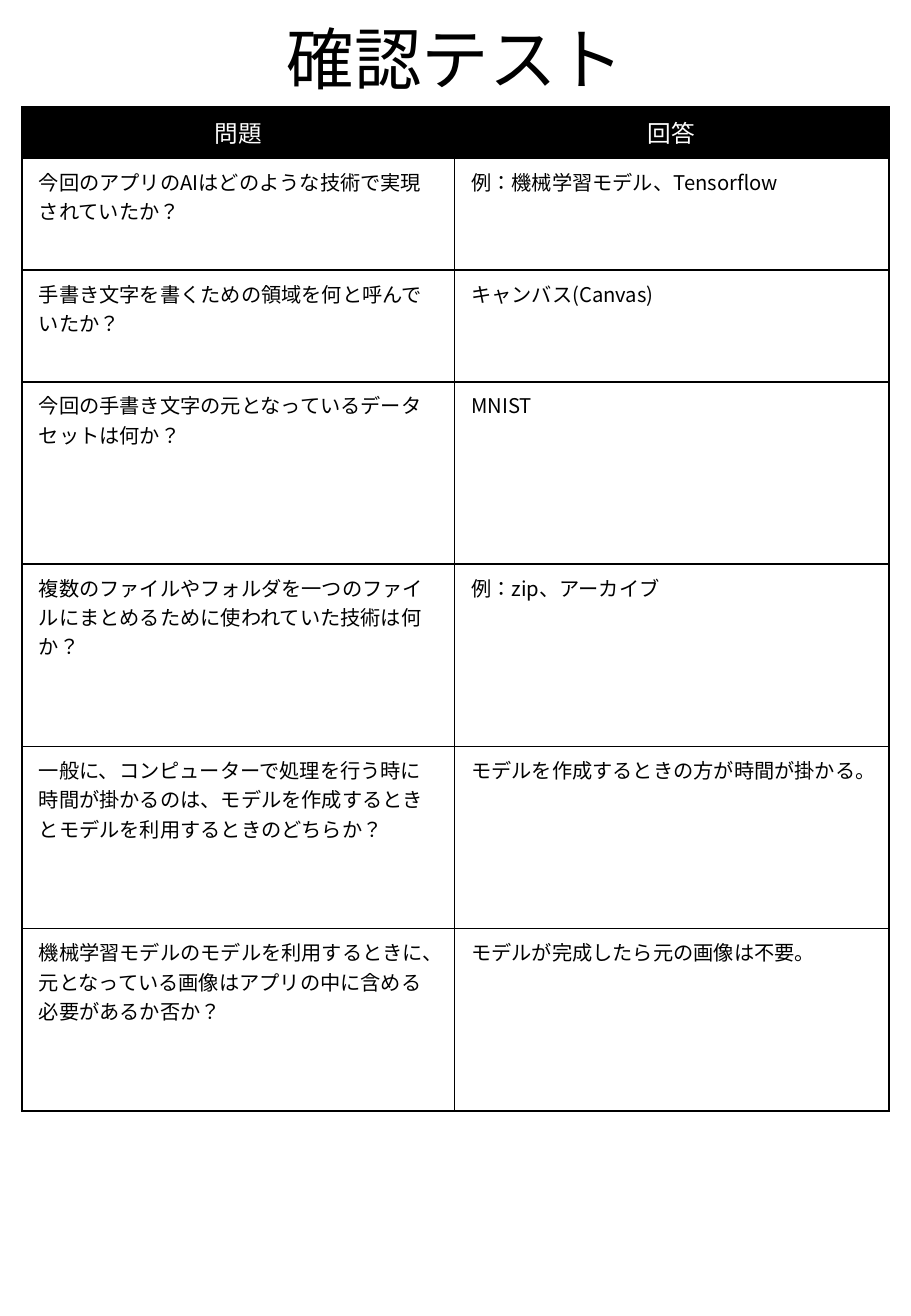
from lxml import etree
from pptx import Presentation
from pptx.dml.color import RGBColor
from pptx.enum.lang import MSO_LANGUAGE_ID
from pptx.enum.text import MSO_ANCHOR, PP_ALIGN
from pptx.oxml.ns import qn
from pptx.util import Inches, Pt

TITLE = "確認テスト"
ROWS = [
    (0.4, "問題", "回答"),
    (0.92, "今回のアプリのAIはどのような技術で実現されていたか？",
     "例：機械学習モデル、Tensorflow"),
    (0.92, "手書き文字を書くための領域を何と呼んでいたか？", "キャンバス(Canvas)"),
    (1.5, "今回の手書き文字の元となっているデータセットは何か？", "MNIST"),
    (1.5, "複数のファイルやフォルダを一つのファイルにまとめるために使われていた技術は何か？",
     "例：zip、アーカイブ"),
    (1.5, "一般に、コンピューターで処理を行う時に時間が掛かるのは、"
     "モデルを作成するときとモデルを利用するときのどちらか？",
     "モデルを作成するときの方が時間が掛かる。"),
    (1.5, "機械学習モデルのモデルを利用するときに、"
     "元となっている画像はアプリの中に含める必要があるか否か？",
     "モデルが完成したら元の画像は不要。"),
]
WIDTHS = (3.56, 3.58)
FONT = "Noto Sans CJK JP"
BLACK = RGBColor(0, 0, 0)
WHITE = RGBColor(255, 255, 255)
CENTER = PP_ALIGN.CENTER
LEFT = PP_ALIGN.LEFT
TOP = MSO_ANCHOR.TOP
BOTTOM = MSO_ANCHOR.BOTTOM
JAPANESE = MSO_LANGUAGE_ID.JAPANESE


def write(frame, text, size, color, align):
    para = frame.paragraphs[0]
    para.alignment = align
    run = para.add_run()
    run.text = text
    font = run.font
    font.name = FONT
    font.size = Pt(size)
    font.color.rgb = color
    font.language_id = JAPANESE
    etree.SubElement(font._element, qn("a:ea"), typeface=FONT)
    return para


def border(cell):
    props = cell._tc.get_or_add_tcPr()
    for side in ("lnL", "lnR", "lnT", "lnB"):
        line = etree.SubElement(props, qn(f"a:{side}"), w=str(Pt(1)))
        fill = etree.SubElement(line, qn("a:solidFill"))
        etree.SubElement(fill, qn("a:srgbClr"), val=str(BLACK))


def add_title(slide):
    title = slide.shapes.title
    title.left, title.top = Inches(0.56), Inches(0.06)
    title.width, title.height = Inches(6.38), Inches(0.81)
    frame = title.text_frame
    frame.word_wrap = True
    frame.vertical_anchor = BOTTOM
    para = write(frame, TITLE, 40, BLACK, CENTER)
    para.line_spacing = 0.9


def add_quiz(slide):
    high = sum(row[0] for row in ROWS)
    table = slide.shapes.add_table(
        len(ROWS), len(WIDTHS), Inches(0.18), Inches(0.88),
        Inches(sum(WIDTHS)), Inches(high)).table
    table.horz_banding = False
    for col, width in zip(table.columns, WIDTHS):
        col.width = Inches(width)
    for i, (height, *texts) in enumerate(ROWS):
        table.rows[i].height = Inches(height)
        back, size, color, align = (
            (WHITE, 12, BLACK, LEFT) if i else (BLACK, 14, WHITE, CENTER))
        for j, text in enumerate(texts):
            cell = table.cell(i, j)
            cell.margin_left = cell.margin_right = Inches(0.14)
            cell.margin_top = cell.margin_bottom = Inches(0.07)
            cell.vertical_anchor = TOP
            border(cell)
            cell.fill.solid()
            cell.fill.fore_color.rgb = back
            para = write(cell.text_frame, text, size, color, align)
            para.runs[0].font.bold = False


def main():
    deck = Presentation()
    deck.slide_width, deck.slide_height = Inches(7.5), Inches(10.83)
    slide = deck.slides.add_slide(deck.slide_layouts[5])
    add_title(slide)
    add_quiz(slide)
    deck.save("out.pptx")


if __name__ == "__main__":
    main()
